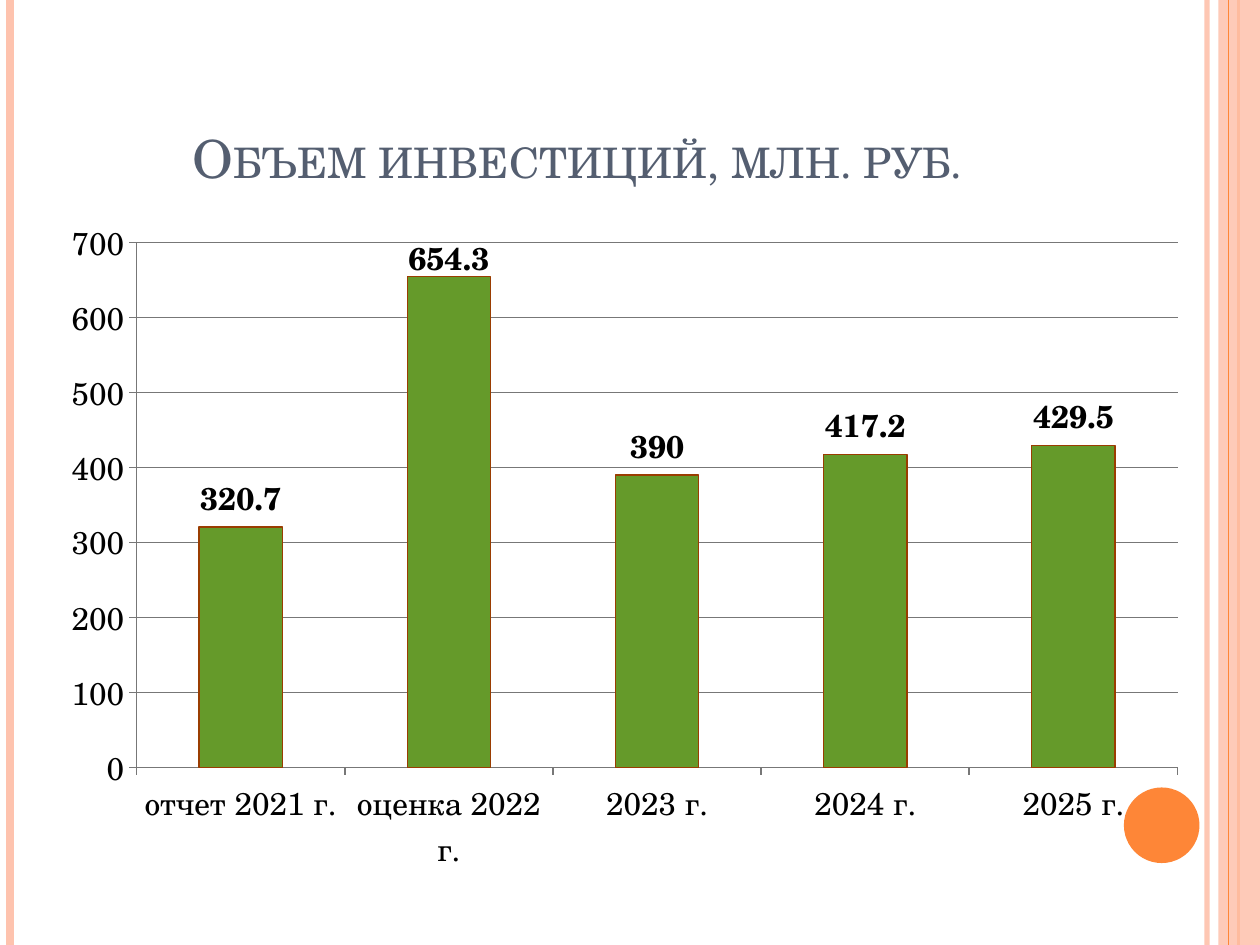
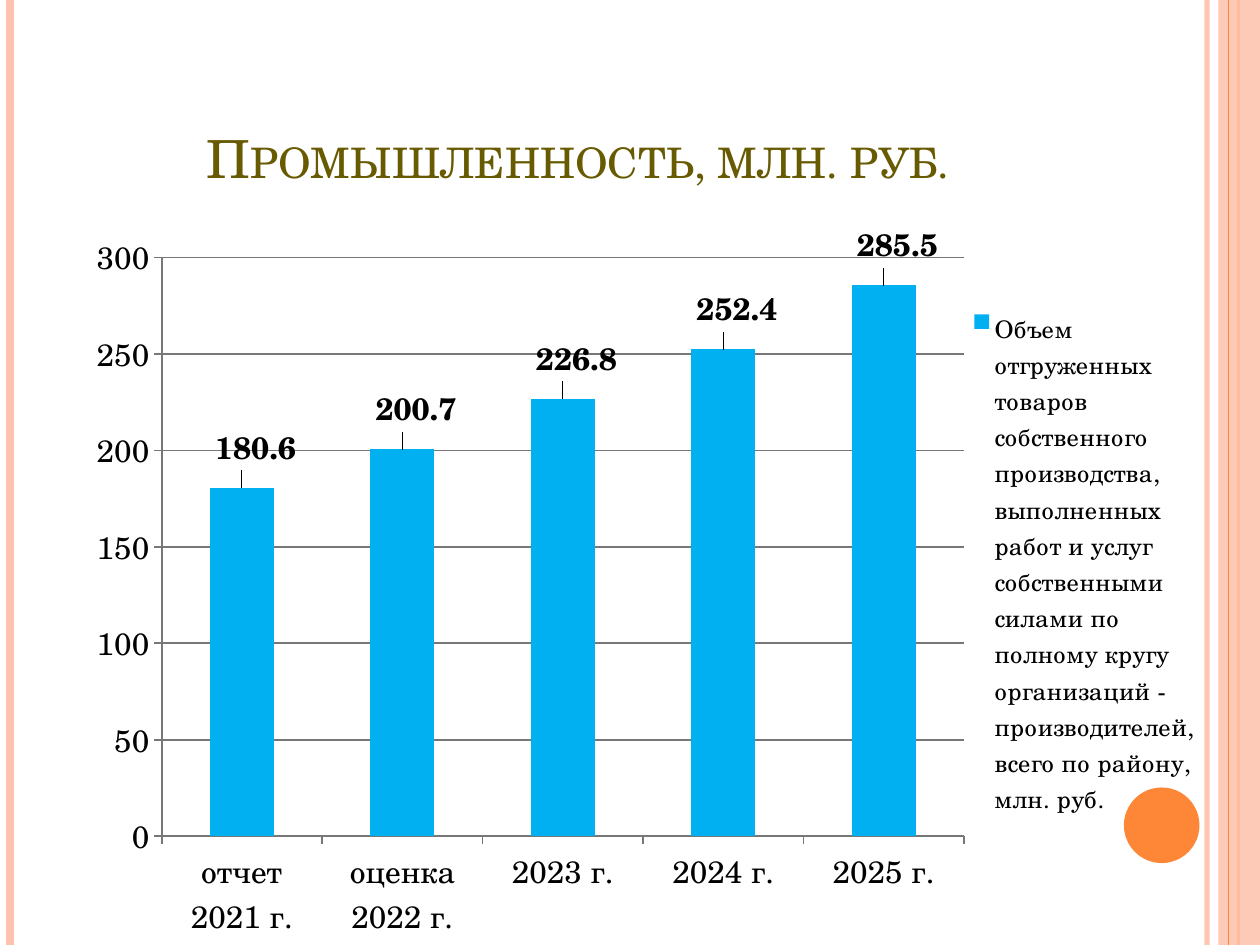
import pptx
import pptx.util
import pptx.chart.data
import pptx.dml.color
import pptx.enum.chart
import pptx.enum.shapes
import pptx.enum.text
import pptx.oxml
import pptx.oxml.ns
from pptx.util import Inches

FONT = "TeX Gyre Schola"
COLORS = {
    "peach": "FEC3AE", "orange": "FE8637", "slate": "545E70", "olive": "675A00",
    "green": "659A2A", "rust": "9A3D01", "blue": "00B0F0",
    "axis": "777777", "text": "000000",
}
qn = pptx.oxml.ns.qn


def rgb(name):
    return pptx.dml.color.RGBColor.from_string(COLORS[name])


def set_layout(parent, index, **values):
    """Give a chart part a manual layout, as shares of the chart's size."""
    for old in parent.findall(qn("c:layout")):
        parent.remove(old)
    layout = parent.makeelement(qn("c:layout"), {})
    manual = pptx.oxml.ns.qn("c:manualLayout")
    manual = layout.makeelement(manual, {})
    layout.append(manual)
    for tag, value in values.items():
        manual.append(manual.makeelement(qn("c:" + tag), {"val": str(value)}))
    parent.insert(index, layout)


# Shared bands: x, colour, width in points, opacity in percent
RULES_BEHIND = [(9.58, "peach", 3, 93), (0.08, "peach", 4.5, 100), (9.83, "orange", 1.5, 100)]
RULES_FRONT = [(9.75, "orange", 0.75, 100)]
# Solid shapes: preset, box, colour, opacity
BAND = (pptx.enum.shapes.MSO_SHAPE.RECTANGLE, (9.67, 0, 0.33, 7.5), "peach", 87)
DISC = (pptx.enum.shapes.MSO_SHAPE.OVAL, (8.92, 6.25, 0.6, 0.6), "orange", 100)
DECOR = RULES_BEHIND + [BAND] + RULES_FRONT + [DISC]

YEARS = ["отчет 2021 г.", "оценка 2022 г.", "2023 г.", "2024 г.", "2025 г."]

SLIDES = [
    {
        "title": "Объем инвестиций, млн. руб.", "title_color": "slate",
        "box": (0.39, 1.64, 9.14, 5.39), "plot": (0.076, 0.053, 0.904, 0.773),
        "series": "Series 1", "values": [320.7, 654.3, 390, 417.2, 429.5],
        "fill": "green", "outline": "rust", "max": 700, "step": 100,
        "legend": None, "label_shifts": {1: (0, 0.016)},
    },
    {
        "title": "Промышленность, млн. руб.", "title_color": "olive",
        "box": (0.5, 1.75, 9.11, 5.75), "plot": (0.086, 0.037, 0.699, 0.811),
        "series": "Объем отгруженных товаров собственного производства, "
                  "выполненных работ и услуг собственными силами по полному кругу "
                  "организаций - производителей, всего по району, млн. руб.",
        "values": [180.6, 200.7, 226.8, 252.4, 285.5],
        "fill": "blue", "outline": None, "max": 300, "step": 50,
        "legend": (0.79, 0.11, 0.2, 0.71),
        "label_shifts": {i: (0.012, -0.017) for i in range(len(YEARS))},
    },
]

prs = pptx.Presentation()
prs.slide_width, prs.slide_height = Inches(10), Inches(7.5)

for content in SLIDES:
    slide = prs.slides.add_slide(prs.slide_layouts[6])

    # Side bands and disc
    for first, second, third, opacity in DECOR:
        if isinstance(second, tuple):
            decor = slide.shapes.add_shape(first, *map(Inches, second))
            decor.shadow.inherit = False
            decor.fill.solid()
            decor.fill.fore_color.rgb = rgb(third)
            decor.line.fill.background()
        else:
            decor = slide.shapes.add_connector(
                pptx.enum.shapes.MSO_CONNECTOR.STRAIGHT,
                Inches(first), 0, Inches(first), Inches(7.5))
            decor.line.color.rgb = rgb(second)
            decor.line.width = pptx.util.Pt(third)
            props = decor._element.spPr
            props.append(props.makeelement(qn("a:effectLst"), {}))
        if opacity < 100:
            color = next(decor._element.spPr.iter(qn("a:srgbClr")))
            color.append(color.makeelement(qn("a:alpha"), {"val": str(opacity * 1000)}))

    # Title in small capitals
    title = slide.shapes.add_textbox(*map(Inches, (0.5, 0.3, 8.17, 1.25))).text_frame
    title.word_wrap = True
    title.vertical_anchor = pptx.enum.text.MSO_ANCHOR.BOTTOM
    heading = title.paragraphs[0]
    heading.alignment = pptx.enum.text.PP_ALIGN.CENTER
    heading.font.name = FONT
    heading.font.size = pptx.util.Pt(30)
    heading.font.color.rgb = rgb(content["title_color"])
    heading_run = heading.add_run()
    heading_run.text = content["title"]
    heading_run._r.get_or_add_rPr().set("cap", "small")

    # Column chart
    data = pptx.chart.data.CategoryChartData()
    data.categories = YEARS
    data.add_series(content["series"], content["values"])
    chart = slide.shapes.add_chart(
        pptx.enum.chart.XL_CHART_TYPE.COLUMN_CLUSTERED,
        *map(Inches, content["box"]), data).chart
    chart.has_title = False
    chart.font.name = FONT
    chart.font.size = pptx.util.Pt(18)
    chart.font.color.rgb = rgb("text")
    plot = chart.plots[0]
    plot.gap_width = 150
    plot.vary_by_categories = False
    x, y, w, h = content["plot"]
    set_layout(chart._chartSpace.chart.plotArea, 0, layoutTarget="inner",
               xMode="edge", yMode="edge", x=x, y=y, w=w, h=h)

    # Axes and gridlines
    scale = chart.value_axis
    scale.minimum_scale, scale.maximum_scale = 0, content["max"]
    scale.major_unit = content["step"]
    scale.has_major_gridlines = True
    for line in (scale.format.line, scale.major_gridlines.format.line,
                 chart.category_axis.format.line):
        line.color.rgb = rgb("axis")
        line.width = pptx.util.Pt(1)

    # Columns
    columns = plot.series[0]
    columns.invert_if_negative = False
    columns.format.fill.solid()
    columns.format.fill.fore_color.rgb = rgb(content["fill"])
    if content["outline"]:
        columns.format.line.color.rgb = rgb(content["outline"])
        columns.format.line.width = pptx.util.Pt(0.75)

    # Value labels, some moved from their usual place
    labels = columns.data_labels
    labels.show_value = True
    shifted = [columns.points[i].data_label for i in content["label_shifts"]]
    for label in [labels] + shifted:
        label.position = pptx.enum.chart.XL_LABEL_POSITION.OUTSIDE_END
        label.font.name = FONT
        label.font.size = pptx.util.Pt(18)
        label.font.bold = True
        label.font.color.rgb = rgb("text")
    for entry in labels._element.findall(qn("c:dLbl")):
        dx, dy = content["label_shifts"][entry.idx.val]
        set_layout(entry, 1, x=dx, y=dy)

    # Legend
    chart.has_legend = content["legend"] is not None
    if chart.has_legend:
        chart.legend.position = pptx.enum.chart.XL_LEGEND_POSITION.RIGHT
        chart.legend.include_in_layout = False
        chart.legend.font.name = FONT
        chart.legend.font.size = pptx.util.Pt(14)
        chart.legend.font.color.rgb = rgb("text")
        x, y, w, h = content["legend"]
        set_layout(chart.legend._element, 1, xMode="edge", yMode="edge", x=x, y=y, w=w, h=h)

prs.save("out.pptx")
